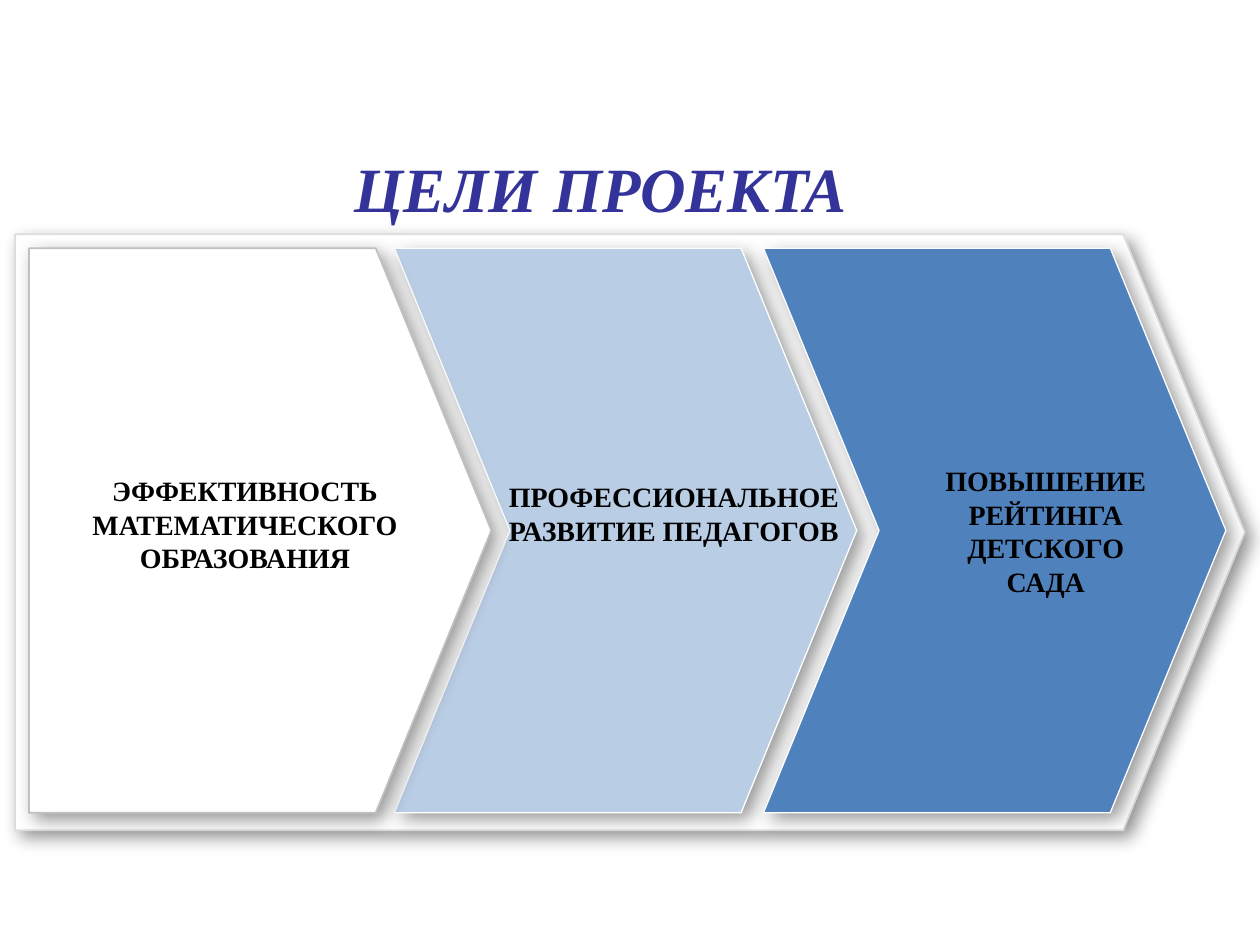
from dataclasses import dataclass

import pptx
import pptx.dml.color
import pptx.enum.shapes
import pptx.enum.text
import pptx.oxml
import pptx.oxml.ns
import pptx.util

Inches = pptx.util.Inches
Pt = pptx.util.Pt
RGBColor = pptx.dml.color.RGBColor
Shape = pptx.enum.shapes.MSO_SHAPE
Align = pptx.enum.text.PP_ALIGN
Anchor = pptx.enum.text.MSO_ANCHOR

FONT = "Times New Roman"
WHITE = RGBColor(0xFF, 0xFF, 0xFF)
BLACK = RGBColor(0, 0, 0)
INDIGO = RGBColor(0x33, 0x33, 0x99)
PALE_BLUE = RGBColor(0xB9, 0xCD, 0xE5)
BLUE = RGBColor(0x4F, 0x81, 0xBD)
LIGHT_GRAY = RGBColor(0xDD, 0xDD, 0xDD)
SILVER = RGBColor(0xC0, 0xC0, 0xC0)

STEP_TOP, STEP_WIDTH, STEP_HEIGHT = 1.97, 3.67, 4.48


@dataclass
class Arrow:
    kind: Shape
    left: float
    fill: RGBColor
    line: RGBColor = WHITE
    line_width: float = 0.75
    point: float = 0.25
    top: float = STEP_TOP
    width: float = STEP_WIDTH
    height: float = STEP_HEIGHT


@dataclass
class Label:
    text: str
    left: float
    top: float
    width: float
    height: float
    align: Align = Align.CENTER
    anchor: Anchor = Anchor.TOP
    size: int = 16
    color: RGBColor = BLACK
    italic: bool = False


ARROWS = [
    Arrow(Shape.PENTAGON, 0.12, WHITE, LIGHT_GRAY, 1, 0.204, 1.86, 9.76, 4.73),
    Arrow(Shape.CHEVRON, 3.13, PALE_BLUE),
    Arrow(Shape.PENTAGON, 0.23, WHITE, SILVER, 1),
    Arrow(Shape.CHEVRON, 6.06, BLUE),
]

LABELS = [
    Label("ЦЕЛИ ПРОЕКТА", 2.29, 0.68, 4.96, 1.61, anchor=Anchor.MIDDLE,
          size=36, color=INDIGO, italic=True),
    Label("ЭФФЕКТИВНОСТЬ МАТЕМАТИЧЕСКОГО ОБРАЗОВАНИЯ", 0.28, 3.71, 3.33, 1.21),
    Label("ПРОФЕССИОНАЛЬНОЕ РАЗВИТИЕ ПЕДАГОГОВ", 3.94, 3.76, 3.19, 0.64,
          align=Align.LEFT),
    Label("ПОВЫШЕНИЕ РЕЙТИНГА ДЕТСКОГО САДА", 7.25, 3.63, 2.1, 1.18),
]


def add_shadow(shape) -> None:
    effects = pptx.oxml.parse_xml(
        f'<a:effectLst {pptx.oxml.ns.nsdecls("a")}>'
        f'<a:outerShdw blurRad="{Pt(10)}" dist="{Pt(5)}" dir="2700000" '
        'algn="tl" rotWithShape="0"><a:srgbClr val="000000">'
        '<a:alpha val="40000"/></a:srgbClr></a:outerShdw></a:effectLst>'
    )
    shape.element.spPr.append(effects)


def draw_arrow(page, arrow: Arrow) -> None:
    shape = page.shapes.add_shape(
        arrow.kind, Inches(arrow.left), Inches(arrow.top),
        Inches(arrow.width), Inches(arrow.height))
    shape.adjustments[0] = arrow.point
    shape.fill.solid()
    shape.fill.fore_color.rgb = arrow.fill
    shape.line.color.rgb = arrow.line
    shape.line.width = Pt(arrow.line_width)
    add_shadow(shape)


def draw_label(page, label: Label) -> None:
    box = page.shapes.add_textbox(
        Inches(label.left), Inches(label.top),
        Inches(label.width), Inches(label.height))
    frame = box.text_frame
    frame.text = label.text
    frame.word_wrap = True
    frame.vertical_anchor = label.anchor
    para = frame.paragraphs[0]
    para.alignment = label.align
    for span in para.runs:
        span.font.name = FONT
        span.font.size = Pt(label.size)
        span.font.bold = True
        span.font.italic = label.italic
        span.font.color.rgb = label.color


def main() -> None:
    deck = pptx.Presentation()
    deck.slide_width = Inches(10)
    deck.slide_height = Inches(7.5)
    page = deck.slides.add_slide(deck.slide_layouts[6])
    for arrow in ARROWS:
        draw_arrow(page, arrow)
    for label in LABELS:
        draw_label(page, label)
    deck.save("out.pptx")


if __name__ == "__main__":
    main()
